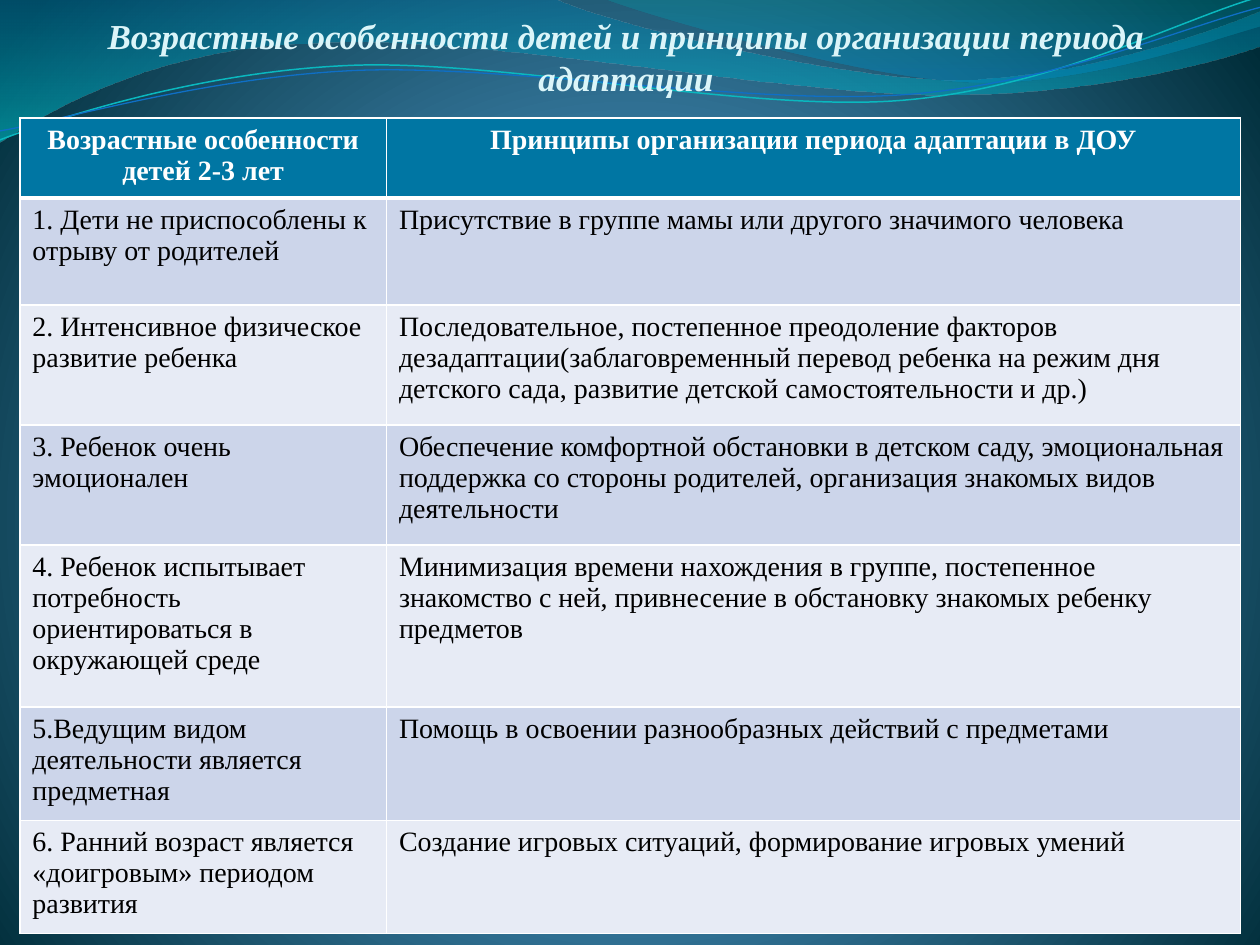
from lxml import etree
from pptx import Presentation
from pptx.dml.color import RGBColor
from pptx.enum.text import MSO_ANCHOR, PP_ALIGN
from pptx.oxml.ns import qn
from pptx.util import Cm, Pt

CENTER, LEFT = PP_ALIGN.CENTER, PP_ALIGN.LEFT
BOTTOM = MSO_ANCHOR.BOTTOM
FONT = "Times New Roman"
C = {
    "bg_light": "4AA0D6", "bg_mid": "4C98C7", "bg_dark": "002C38",
    "wave_blue": "0074A1", "wave_cyan": "00C6CF",
    "wave_teal": "00A1A9", "wave_sky": "008BBF",
    "line_cyan": "0AB8BF", "line_blue": "0F6FC6",
    "title": "DBF5F9", "header": "0076A3", "white": "FFFFFF",
    "black": "000000", "band_dark": "CCD5EA", "band_light": "E7EBF5",
}


def set_text(tf, text, size=16, color="black", bold=False, italic=False, align=LEFT):
    p = tf.paragraphs[0]
    p.alignment = align
    r = p.add_run()
    r.text = text
    r.font.name, r.font.size = FONT, Pt(size)
    r.font.bold, r.font.italic = bold, italic
    r.font.color.rgb = RGBColor.from_string(C[color])


def set_gradient(fill, element, stops, rect=None):
    """Stops are (position %, colour, opacity %); rect makes it radial."""
    fill.gradient()
    grad = element.find(".//" + qn("a:gradFill"))
    for child in list(grad):
        grad.remove(child)
    gs_list = etree.SubElement(grad, qn("a:gsLst"))
    for pos, color, opacity in stops:
        gs = etree.SubElement(gs_list, qn("a:gs"), pos=str(pos * 1000))
        clr = etree.SubElement(gs, qn("a:srgbClr"), val=C[color])
        if opacity < 100:
            etree.SubElement(clr, qn("a:alpha"), val=str(opacity * 1000))
    if rect:
        circle = etree.SubElement(grad, qn("a:path"), path="circle")
        sides = {side: str(v * 1000) for side, v in zip("ltrb", rect)}
        etree.SubElement(circle, qn("a:fillToRect"), **sides)
    else:
        etree.SubElement(grad, qn("a:lin"), ang="5400000", scaled="0")


prs = Presentation()
prs.slide_width, prs.slide_height = Cm(25.4), Cm(19.05)
s = prs.slides.add_slide(prs.slide_layouts[6])

# Background
set_gradient(s.background.fill, s.element,
             [(0, "bg_light", 100), (25, "bg_mid", 100), (100, "bg_dark", 100)],
             rect=(10, 110, 10, 100))

# Waves: points in cm; 2 numbers make a line, 6 make a cubic curve
waves = [
    ([(0, 0), (11.18, -0.03), (12.09, 0.43, 16.87, 1.6, 19.25, 1.6),
      (21.67, 1.6, 24.33, 0.66, 25.4, 0.23), (25.43, 0.91),
      (24.97, 1.12, 22.1, 1.93, 18.95, 1.91), (15.8, 1.91, 9.7, 0.71, 6.53, 0.86),
      (3.28, 0.91, 1.17, 2.11, -0.03, 2.87), (0, 0)],
     [(0, "wave_blue", 45), (100, "wave_cyan", 55)], None, 0),
    ([(12.17, -0.03), (12.93, 0.28, 17.32, 1.57, 19.53, 1.65),
      (21.74, 1.75, 24.41, 0.81, 25.4, 0.53), (25.4, 0), (12.17, -0.03)],
     [(0, "wave_teal", 30), (80, "wave_sky", 45)], None, 0),
    ([(0, 2.82), (1.22, 2.36, 4.01, 1.45, 7.04, 1.32),
      (10.03, 1.19, 15.06, 2.26, 18.11, 2.03), (21.16, 1.8, 23.83, 0.38, 25.35, -0.05)],
     None, "line_cyan", 0.85),
    ([(0, 2.64), (1.19, 2.44, 4.17, 1.55, 7.19, 1.42),
      (10.24, 1.3, 15.16, 2.13, 18.21, 1.91), (21.23, 1.7, 23.9, 0.53, 25.4, 0.15)],
     None, "line_blue", 0.75),
]
for segments, stops, line_color, width in waves:
    points = [(Cm(seg[i]), Cm(seg[i + 1]))
              for seg in segments for i in range(0, len(seg), 2)]
    builder = s.shapes.build_freeform(*points[0])
    builder.add_line_segments(points[1:], close=stops is not None)
    wave = builder.convert_to_shape()
    wave.shadow.inherit = False
    # Join each group of three points into one Bezier curve
    lines = iter(wave.element.findall(".//" + qn("a:lnTo")))
    for seg in segments[1:]:
        first = next(lines)
        if len(seg) == 6:
            first.tag = qn("a:cubicBezTo")
            for _ in range(2):
                extra = next(lines)
                first.append(extra[0])
                extra.getparent().remove(extra)
    if stops:
        set_gradient(wave.fill, wave.element, stops)
        wave.line.fill.background()
    else:
        wave.fill.background()
        wave.line.color.rgb = RGBColor.from_string(C[line_color])
        wave.line.width = Pt(width)

# Title
title = s.shapes.add_textbox(Cm(1.19), Cm(0), Cm(22.86), Cm(1.98))
tf = title.text_frame
tf.word_wrap = True
tf.vertical_anchor = BOTTOM
tf.margin_left = tf.margin_right = tf.margin_bottom = Cm(0)
tf.margin_top = Cm(0.13)
set_text(tf, "Возрастные особенности детей и принципы организации периода адаптации",
         size=20, color="title", bold=True, italic=True, align=CENTER)

# Table
rows = [
    ("Возрастные особенности детей 2-3 лет",
     "Принципы организации периода адаптации в ДОУ"),
    ("1. Дети не приспособлены к отрыву от родителей",
     "Присутствие в группе мамы или другого значимого человека"),
    ("2. Интенсивное физическое развитие ребенка",
     "Последовательное, постепенное преодоление факторов дезадаптации"
     "(заблаговременный перевод ребенка на режим дня детского сада, "
     "развитие детской самостоятельности и др.)"),
    ("3. Ребенок очень эмоционален",
     "Обеспечение комфортной обстановки в детском саду, эмоциональная поддержка "
     "со стороны родителей, организация знакомых видов деятельности"),
    ("4. Ребенок испытывает потребность ориентироваться в окружающей среде",
     "Минимизация времени нахождения в группе, постепенное знакомство с ней, "
     "привнесение в обстановку знакомых ребенку предметов"),
    ("5.Ведущим видом деятельности является предметная",
     "Помощь в освоении разнообразных действий с предметами"),
    ("6. Ранний возраст является «доигровым» периодом развития",
     "Создание игровых ситуаций, формирование игровых умений"),
]
col_widths = [7.39, 17.22]
row_heights = [1.61, 2.16, 2.42, 2.42, 3.26, 2.28, 2.28]
table = s.shapes.add_table(len(rows), len(col_widths), Cm(0.4), Cm(2.38),
                           Cm(sum(col_widths)), Cm(sum(row_heights))).table
for col, width in zip(table.columns, col_widths):
    col.width = Cm(width)
for i, (row, height) in enumerate(zip(rows, row_heights)):
    table.rows[i].height = Cm(height)
    header = i == 0
    band = "header" if header else "band_dark" if i % 2 else "band_light"
    for j, text in enumerate(row):
        cell = table.cell(i, j)
        cell.fill.solid()
        cell.fill.fore_color.rgb = RGBColor.from_string(C[band])
        set_text(cell.text_frame, text, bold=header,
                 color="white" if header else "black",
                 align=CENTER if header else LEFT)
        # White borders, thick between the header and the body
        tc_pr = cell._tc.get_or_add_tcPr()
        for k, side in enumerate("LRTB"):
            thick = (header and side == "B") or (i == 1 and side == "T")
            ln = etree.Element(qn("a:ln" + side), w=str(Pt(3 if thick else 1)))
            solid = etree.SubElement(ln, qn("a:solidFill"))
            etree.SubElement(solid, qn("a:srgbClr"), val=C["white"])
            tc_pr.insert(k, ln)

prs.save("out.pptx")
